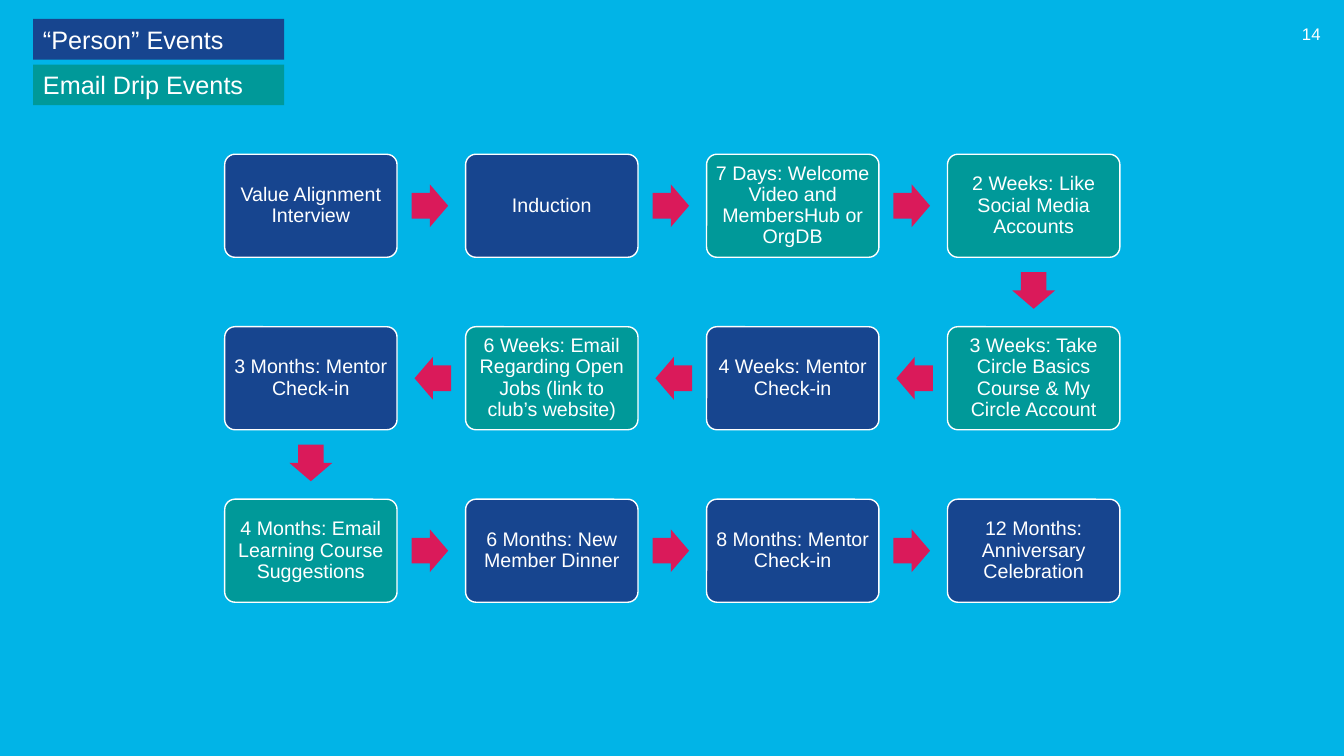
from pptx import Presentation
from pptx.dml.color import RGBColor
from pptx.enum.shapes import MSO_SHAPE as Shape
from pptx.enum.text import MSO_ANCHOR as Anchor, PP_ALIGN as Align
from pptx.util import Pt

BACKGROUND = "01B4E7"
PERSON = "17458F"
EMAIL = "009999"
ARROW = "DA1A5A"
WHITE = "FFFFFF"

COLUMNS = 4
LEFT, TOP = 160.5, 110.2
STEP_X, STEP_Y = 172.1, 123.2
BOX_WIDTH, BOX_HEIGHT = 123.1, 73.6
ARROW_WIDTH, ARROW_HEIGHT = 26.1, 30.5
ARROW_ACROSS, ARROW_DOWN = 85, 60.5

EVENTS = [
    ("Value Alignment Interview", PERSON),
    ("Induction", PERSON),
    ("7 Days: Welcome Video and MembersHub or OrgDB", EMAIL),
    ("2 Weeks: Like Social Media Accounts", EMAIL),
    ("3 Weeks: Take Circle Basics Course & My Circle Account", EMAIL),
    ("4 Weeks: Mentor Check-in", PERSON),
    ("6 Weeks: Email Regarding Open Jobs (link to club’s website)", EMAIL),
    ("3 Months: Mentor Check-in", PERSON),
    ("4 Months: Email Learning Course Suggestions", EMAIL),
    ("6 Months: New Member Dinner", PERSON),
    ("8 Months: Mentor Check-in", PERSON),
    ("12 Months: Anniversary Celebration", PERSON),
]


def color(value):
    return RGBColor.from_string(value)


class SlideBuilder:
    def __init__(self, slide, font="Arial"):
        self.slide = slide
        self.font = font

    def background(self, fill):
        self.slide.background.fill.solid()
        self.slide.background.fill.fore_color.rgb = color(fill)

    def set_text(self, shape, text, size, align, anchor=Anchor.MIDDLE):
        frame = shape.text_frame
        frame.word_wrap = True
        frame.vertical_anchor = anchor
        paragraph = frame.paragraphs[0]
        paragraph.text = text
        paragraph.alignment = align
        paragraph.font.name = self.font
        paragraph.font.size = Pt(size)
        paragraph.font.color.rgb = color(WHITE)
        return frame

    def shape(self, kind, left, top, width, height, fill):
        shape = self.slide.shapes.add_shape(kind, Pt(left), Pt(top), Pt(width), Pt(height))
        shape.shadow.inherit = False
        shape.fill.solid()
        shape.fill.fore_color.rgb = color(fill)
        shape.line.fill.background()
        return shape

    def label(self, text, left, top, width, height, size, align):
        box = self.slide.shapes.add_textbox(Pt(left), Pt(top), Pt(width), Pt(height))
        self.set_text(box, text, size, align)

    def legend(self, text, top, fill):
        shape = self.shape(Shape.RECTANGLE, 23.6, top, 179.3, 29.1, fill)
        self.set_text(shape, text, 18, Align.LEFT, Anchor.TOP)

    def event(self, text, center_x, center_y, fill):
        shape = self.shape(Shape.ROUNDED_RECTANGLE, center_x - BOX_WIDTH / 2,
                           center_y - BOX_HEIGHT / 2, BOX_WIDTH, BOX_HEIGHT, fill)
        shape.adjustments[0] = 0.1
        shape.line.color.rgb = color(WHITE)
        shape.line.width = Pt(1)
        frame = self.set_text(shape, text, 14, Align.CENTER)
        frame.margin_left = frame.margin_right = Pt(4)
        frame.margin_top = frame.margin_bottom = Pt(4)
        frame.paragraphs[0].line_spacing = 0.9

    def arrow(self, center_x, center_y, rotation):
        shape = self.shape(Shape.RIGHT_ARROW, center_x - ARROW_WIDTH / 2,
                           center_y - ARROW_HEIGHT / 2, ARROW_WIDTH, ARROW_HEIGHT, ARROW)
        shape.adjustments[0] = 0.6
        shape.adjustments[1] = 0.5
        shape.rotation = rotation


def main():
    presentation = Presentation()
    presentation.slide_width = Pt(960)
    presentation.slide_height = Pt(540)
    builder = SlideBuilder(presentation.slides.add_slide(presentation.slide_layouts[6]))

    builder.background(BACKGROUND)
    builder.label("14", 917.3, 9.4, 33.1, 28.8, 12, Align.RIGHT)

    for index, (text, fill) in enumerate(EVENTS):
        row, position = divmod(index, COLUMNS)
        reverse = row % 2 == 1
        column = COLUMNS - 1 - position if reverse else position
        center_x = LEFT + column * STEP_X + BOX_WIDTH / 2
        center_y = TOP + row * STEP_Y + BOX_HEIGHT / 2
        builder.event(text, center_x, center_y, fill)
        if index == len(EVENTS) - 1:
            continue
        if position == COLUMNS - 1:
            builder.arrow(center_x, center_y + ARROW_DOWN, 90)
        elif reverse:
            builder.arrow(center_x - ARROW_ACROSS, center_y, 180)
        else:
            builder.arrow(center_x + ARROW_ACROSS, center_y, 0)

    builder.legend("“Person” Events", 13.5, PERSON)
    builder.legend("Email Drip Events", 46.1, EMAIL)

    presentation.save("out.pptx")


if __name__ == "__main__":
    main()
